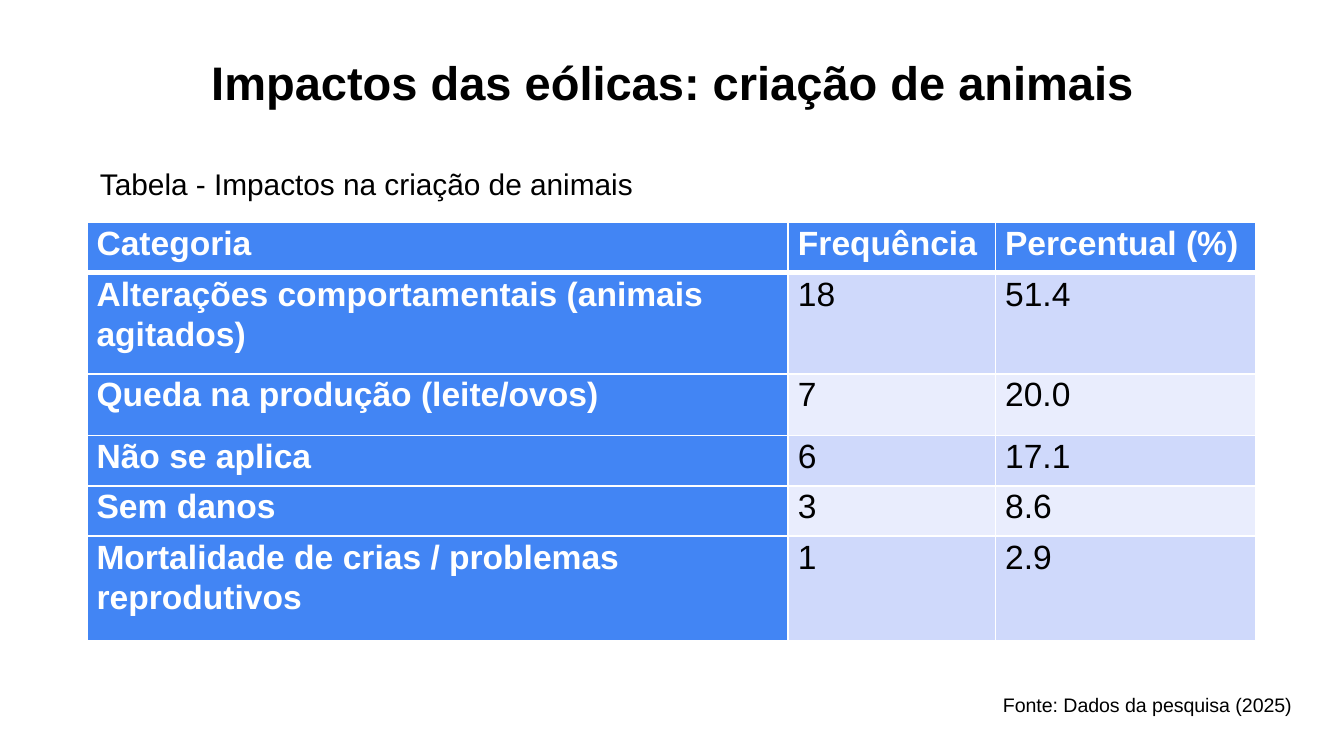
from lxml import etree
from pptx import Presentation
from pptx.dml.color import RGBColor
from pptx.enum.text import MSO_ANCHOR, PP_ALIGN
from pptx.oxml.ns import qn
from pptx.util import Pt

CENTER, LEFT = PP_ALIGN.CENTER, PP_ALIGN.LEFT
TOP, MIDDLE = MSO_ANCHOR.TOP, MSO_ANCHOR.MIDDLE
PX = 9525  # 96 px to the inch
FONT = "Arial"
BLACK, WHITE, BLUE = "000000", "FFFFFF", "4285F4"
BANDS = ("CFD9FB", "E9EDFD")

TITLE = "Impactos das eólicas: criação de animais"
CAPTION = "Tabela - Impactos na criação de animais"
SOURCE = "Fonte: Dados da pesquisa (2025)"
ROWS = [
    ("Categoria", "Frequência", "Percentual (%)"),
    ("Alterações comportamentais (animais agitados)", "18", "51.4"),
    ("Queda na produção (leite/ovos)", "7", "20.0"),
    ("Não se aplica", "6", "17.1"),
    ("Sem danos", "3", "8.6"),
    ("Mortalidade de crias / problemas reprodutivos", "1", "2.9"),
]
COLUMN_WIDTHS = (501, 148, 186)
ROW_HEIGHTS = (36, 72, 44, 36, 36, 75)


def px(*lengths):
    return [length * PX for length in lengths]


def color(value):
    return RGBColor.from_string(value)


def write(frame, text, size, ink=BLACK, bold=False, align=LEFT):
    para = frame.paragraphs[0]
    para.text = text
    para.alignment = align
    font = para.runs[0].font
    font.name, font.size, font.bold = FONT, Pt(size), bold
    font.color.rgb = color(ink)
    return para


def add_label(slide, text, size, place, wrap, anchor):
    frame = slide.shapes.add_textbox(*px(*place)).text_frame
    frame.word_wrap = wrap
    frame.vertical_anchor = anchor
    write(frame, text, size)


def set_borders(cell, top, bottom):
    """Draw white cell borders, 1 pt at the sides."""
    properties = cell._tc.get_or_add_tcPr()
    widths = {"a:lnL": 1, "a:lnR": 1, "a:lnT": top, "a:lnB": bottom}
    for index, (tag, width) in enumerate(widths.items()):
        line = etree.Element(qn(tag), w=str(Pt(width)))
        fill = etree.SubElement(line, qn("a:solidFill"))
        etree.SubElement(fill, qn("a:srgbClr"), val=WHITE)
        properties.insert(index, line)


def fill_cell(cell, text, row, column):
    heading = row == 0 or column == 0
    cell.margin_left, cell.margin_right = px(7, 7)
    cell.margin_top = cell.margin_bottom = 0
    cell.fill.solid()
    cell.fill.fore_color.rgb = color(BLUE if heading else BANDS[(row - 1) % 2])
    para = write(cell.text_frame, text, 18, WHITE if heading else BLACK, heading)
    para.line_spacing = 1.07
    para.space_after = Pt(8)
    set_borders(cell, 3 if row == 1 else 1, 3 if row == 0 else 1)


def add_impact_table(slide, left, top):
    place = px(left, top, sum(COLUMN_WIDTHS), sum(ROW_HEIGHTS))
    table = slide.shapes.add_table(len(ROWS), len(COLUMN_WIDTHS), *place).table
    table.first_col = True
    for column, width in zip(table.columns, COLUMN_WIDTHS):
        column.width = width * PX
    for row, height in zip(table.rows, ROW_HEIGHTS):
        row.height = height * PX
    for r, texts in enumerate(ROWS):
        for c, text in enumerate(texts):
            fill_cell(table.cell(r, c), text, r, c)


def main():
    deck = Presentation()
    deck.slide_width, deck.slide_height = px(960, 540)
    slide = deck.slides.add_slide(deck.slide_layouts[5])

    title = slide.shapes.title
    title.left, title.top, title.width, title.height = px(117, 28, 727, 60)
    frame = title.text_frame
    frame.margin_left, frame.margin_top, frame.margin_right, frame.margin_bottom = px(10, 10, 10, 10)
    frame.vertical_anchor = TOP
    write(frame, TITLE, 25.2, bold=True, align=CENTER)

    add_impact_table(slide, 62, 159)
    add_label(slide, CAPTION, 16, (62, 113, 406, 36), False, MIDDLE)
    add_label(slide, SOURCE, 10.5, (707, 490, 354, 28), True, TOP)
    deck.save("out.pptx")


if __name__ == "__main__":
    main()
